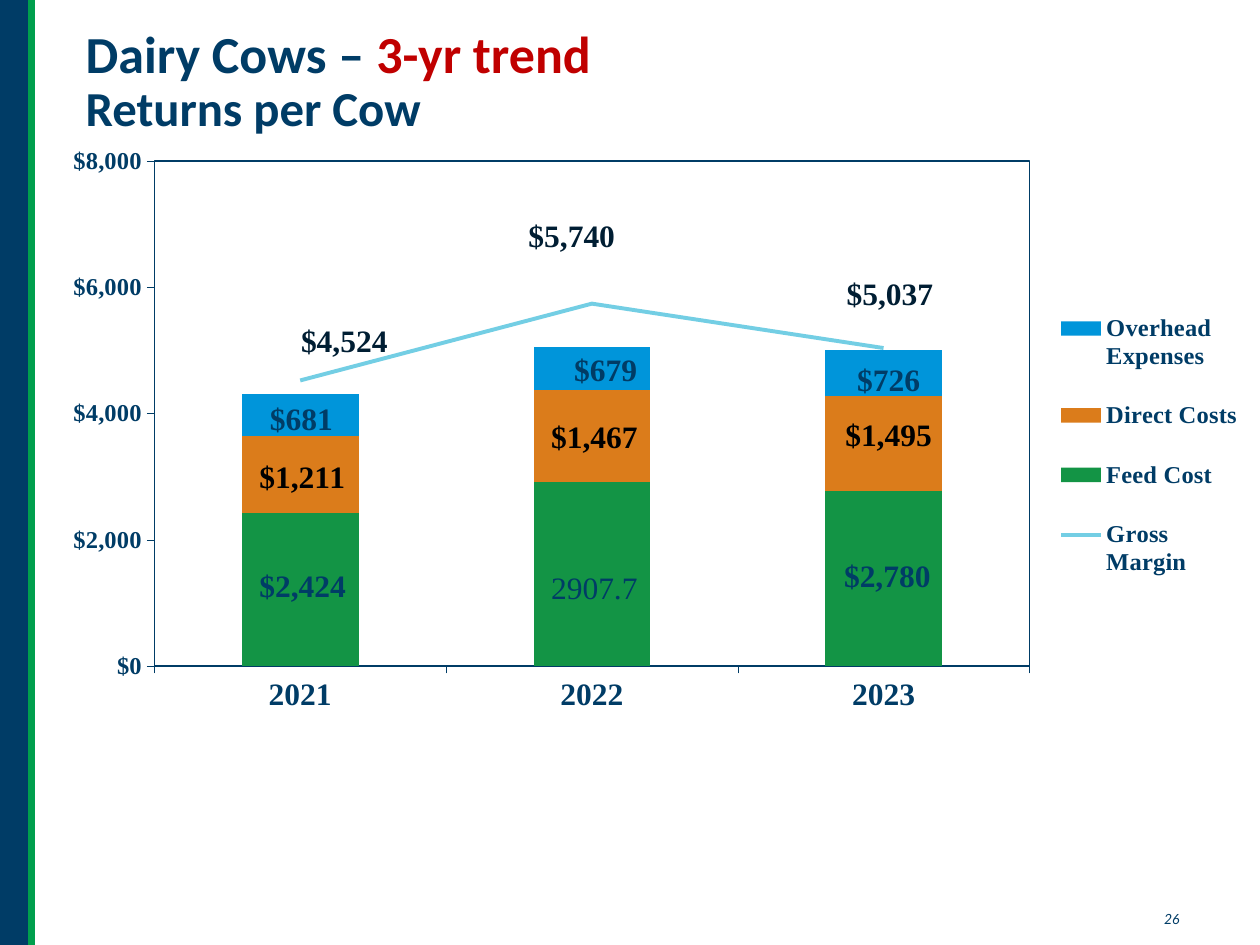
from copy import deepcopy
from dataclasses import dataclass

from lxml.etree import SubElement
from pptx import Presentation
from pptx.chart.data import CategoryChartData
from pptx.dml.color import RGBColor
from pptx.enum.chart import (XL_CHART_TYPE, XL_LABEL_POSITION, XL_LEGEND_POSITION,
                             XL_TICK_LABEL_POSITION, XL_TICK_MARK)
from pptx.enum.shapes import MSO_CONNECTOR, MSO_SHAPE
from pptx.enum.text import MSO_ANCHOR, MSO_AUTO_SIZE, PP_ALIGN
from pptx.oxml import parse_xml
from pptx.oxml.ns import nsdecls, qn
from pptx.util import Inches, Pt


@dataclass(frozen=True)
class Theme:
    navy: str = "003C66"
    green: str = "009F4D"
    red: str = "C00000"
    black: str = "000000"
    midnight: str = "001E33"
    feed: str = "139445"
    direct: str = "DB7C1B"
    overhead: str = "0095DA"
    margin: str = "73CEE4"
    title_font: str = "Calibri"
    number_font: str = "Lato"
    chart_font: str = "Times New Roman"
    title_size: float = 29.7
    subtitle_size: float = 27.9
    label_size: float = 18
    axis_size: float = 14
    number_size: float = 8


@dataclass(frozen=True)
class Measure:
    """One chart series; offsets move its labels, in inches."""
    name: str
    values: tuple
    color: str
    label_color: str
    offsets: tuple


THEME = Theme()
YEARS = ("2021", "2022", "2023")
DOLLARS = '"$"#,##0'
CHART_WIDTH, CHART_HEIGHT = 10.92, 4.67
MEASURES = (
    Measure("Feed Cost", (2424, 2908, 2780), THEME.feed, THEME.navy,
            ((0.02, -0.02), (0.02, 0.12), (0.03, -0.01))),
    Measure("Direct Costs", (1211, 1467, 1495), THEME.direct, THEME.black,
            ((0.02, 0.03), (0.02, 0.02), (0.04, -0.06))),
    Measure("Overhead Expenses", (681, 679, 726), THEME.overhead, THEME.navy,
            ((0.01, 0.04), (0.11, 0.02), (0.04, 0.06))),
    Measure("Gross Margin", (4524, 5740, 5037), THEME.margin, THEME.midnight,
            ((0.35, -0.13), (-0.16, -0.36), (0.05, -0.25))),
)


def style_font(font, name, size, color, bold=False, italic=False):
    font.name, font.size = name, Pt(size)
    font.bold, font.italic = bold, italic
    font.color.rgb = RGBColor.from_string(color)


def add_span(para, text, **style):
    span = para.add_run()
    span.text = text
    style_font(span.font, **style)
    return span


def place_part(part, index, **settings):
    """Give a chart part a manual layout, inserted as its child at index."""
    for old in part.findall(qn("c:layout")):
        part.remove(old)
    layout = parse_xml(f"<c:layout {nsdecls('c')}><c:manualLayout/></c:layout>")
    for tag, value in settings.items():
        SubElement(layout[0], qn(f"c:{tag}")).set("val", str(value))
    part.insert(index, layout)


def move_last_series_to_line(chart):
    """Turn the last column series into a line on the same axes."""
    bars = chart.plots[0]._element
    series = bars.findall(qn("c:ser"))[-1]
    for flag in series.findall(qn("c:invertIfNegative")):
        series.remove(flag)
    lines = parse_xml(f'<c:lineChart {nsdecls("c")}><c:grouping val="standard"/>'
                      '<c:varyColors val="0"/><c:marker val="1"/></c:lineChart>')
    lines.insert(2, series)
    for axis_id in bars.findall(qn("c:axId")):
        lines.append(deepcopy(axis_id))
    bars.addnext(lines)


class SlideBuilder:
    def __init__(self, deck, theme):
        self.theme = theme
        self.page = deck.slides.add_slide(deck.slide_layouts[5])

    def side_band(self, width, height):
        band = self.page.shapes.add_shape(MSO_SHAPE.RECTANGLE, 0, 0, width, height)
        band.shadow.inherit = False
        band.fill.solid()
        band.fill.fore_color.rgb = RGBColor.from_string(self.theme.navy)
        band.line.fill.background()
        edge = self.page.shapes.add_connector(MSO_CONNECTOR.STRAIGHT, width, 0, width, height)
        edge.line.color.rgb = RGBColor.from_string(self.theme.green)
        edge.line.width = Pt(4.5)
        SubElement(edge._element.spPr, qn("a:effectLst"))

    def title(self, lead, accent, subtitle, left, top, width, height):
        box = self.page.shapes.title
        box.left, box.top, box.width, box.height = left, top, width, height
        frame = box.text_frame
        frame.auto_size = MSO_AUTO_SIZE.NONE
        frame.vertical_anchor = MSO_ANCHOR.MIDDLE
        para = frame.paragraphs[0]
        para.alignment, para.line_spacing = PP_ALIGN.LEFT, 0.9
        theme = self.theme
        style = dict(name=theme.title_font, size=theme.title_size, bold=True)
        add_span(para, lead, color=theme.navy, **style)
        span = add_span(para, accent, color=theme.red, **style)
        para.add_line_break()
        para._p[-1].append(deepcopy(span.font._element))
        style["size"] = theme.subtitle_size
        add_span(para, subtitle, color=theme.navy, **style)

    def page_number(self, text, left, top, width, height):
        box = self.page.shapes.add_textbox(left, top, width, height)
        box.text_frame.word_wrap = True
        add_span(box.text_frame.paragraphs[0], text, name=self.theme.number_font,
                 size=self.theme.number_size, color=self.theme.navy, italic=True)

    def returns_chart(self, left, top, width, height):
        data = CategoryChartData(number_format=DOLLARS)
        data.categories = YEARS
        for measure in MEASURES:
            data.add_series(measure.name, measure.values)
        chart = self.page.shapes.add_chart(XL_CHART_TYPE.COLUMN_STACKED, left, top,
                                           width, height, data).chart
        chart.has_title = False
        self._chart_font(chart.font, self.theme.axis_size)
        move_last_series_to_line(chart)
        columns = chart.plots[0]
        columns.gap_width, columns.overlap = 150, 100
        for plot in chart.plots:
            plot.vary_by_categories = False
        self._axes(chart)
        self._frame_and_legend(chart)
        for series, measure in zip(columns.series, MEASURES):
            series.format.fill.solid()
            series.format.fill.fore_color.rgb = RGBColor.from_string(measure.color)
            self._labels(series, measure, XL_LABEL_POSITION.CENTER)
        line, margin = chart.plots[1].series[0], MEASURES[-1]
        line.smooth = False
        line.marker._element.get_or_add_marker().get_or_add_symbol().set("val", "none")
        line.format.line.color.rgb = RGBColor.from_string(margin.color)
        line.format.line.width = Pt(2.25)
        self._labels(line, margin, XL_LABEL_POSITION.ABOVE)
        custom = columns.series[0].points[1].data_label.text_frame
        add_span(custom.paragraphs[0], "2907.7", name=self.theme.chart_font,
                 size=self.theme.label_size, color=self.theme.navy)

    def _chart_font(self, font, size, color=None):
        style_font(font, self.theme.chart_font, size, color or self.theme.navy, bold=True)

    def _axes(self, chart):
        years, dollars = chart.category_axis, chart.value_axis
        for axis, size in ((years, self.theme.label_size), (dollars, self.theme.axis_size)):
            axis.has_major_gridlines = False
            axis.major_tick_mark = XL_TICK_MARK.OUTSIDE
            axis.minor_tick_mark = XL_TICK_MARK.NONE
            axis.format.line.color.rgb = RGBColor.from_string(self.theme.navy)
            axis.format.line.width = Pt(0.15)
            self._chart_font(axis.tick_labels.font, size)
        years.tick_label_position = XL_TICK_LABEL_POSITION.LOW
        dollars.minimum_scale, dollars.maximum_scale, dollars.major_unit = 0, 8000, 2000
        dollars.tick_labels.number_format = DOLLARS
        dollars.tick_labels.number_format_is_linked = False

    def _frame_and_legend(self, chart):
        area = chart._chartSpace.chart.plotArea
        place_part(area, 0, layoutTarget="inner", xMode="edge", yMode="edge",
                   x=0.082, y=0.011, w=0.636, h=0.869)
        area.append(parse_xml(
            f'<c:spPr {nsdecls("c", "a")}><a:noFill/><a:ln w="{Pt(1)}"><a:solidFill>'
            f'<a:srgbClr val="{self.theme.navy}"/></a:solidFill></a:ln></c:spPr>'))
        chart.has_legend = True
        chart.legend.position = XL_LEGEND_POSITION.RIGHT
        chart.legend.include_in_layout = False
        self._chart_font(chart.legend.font, self.theme.axis_size)
        place_part(chart.legend._element, 1, xMode="edge", yMode="edge",
                   x=0.735, y=0.22, w=0.14, h=0.56)

    def _labels(self, series, measure, position):
        for index, (x, y) in enumerate(measure.offsets):
            label = series.points[index].data_label
            self._chart_font(label.font, self.theme.label_size, measure.label_color)
            label.position = position
            part = series._element.xpath(f"c:dLbls/c:dLbl[c:idx/@val='{index}']")[0]
            place_part(part, 1, x=x / CHART_WIDTH, y=y / CHART_HEIGHT)
        labels = series.data_labels
        labels.show_value = True
        labels.number_format, labels.number_format_is_linked = DOLLARS, False
        self._chart_font(labels.font, self.theme.label_size, measure.label_color)
        for leader in labels._element.findall(qn("c:showLeaderLines")):
            leader.set("val", "0")


def main():
    deck = Presentation()
    deck.slide_width, deck.slide_height = Inches(10), Inches(7.5)
    slide = SlideBuilder(deck, THEME)
    slide.side_band(Inches(0.25), deck.slide_height)
    slide.page_number("26", Inches(9.14), Inches(7.18), Inches(0.45), Inches(0.24))
    slide.title("Dairy Cows – ", "3-yr trend", "Returns per Cow",
                Inches(0.58), Inches(0.16), Inches(7.67), Inches(1))
    slide.returns_chart(Inches(0.33), Inches(1.17), Inches(CHART_WIDTH), Inches(CHART_HEIGHT))
    deck.save("out.pptx")


if __name__ == "__main__":
    main()
